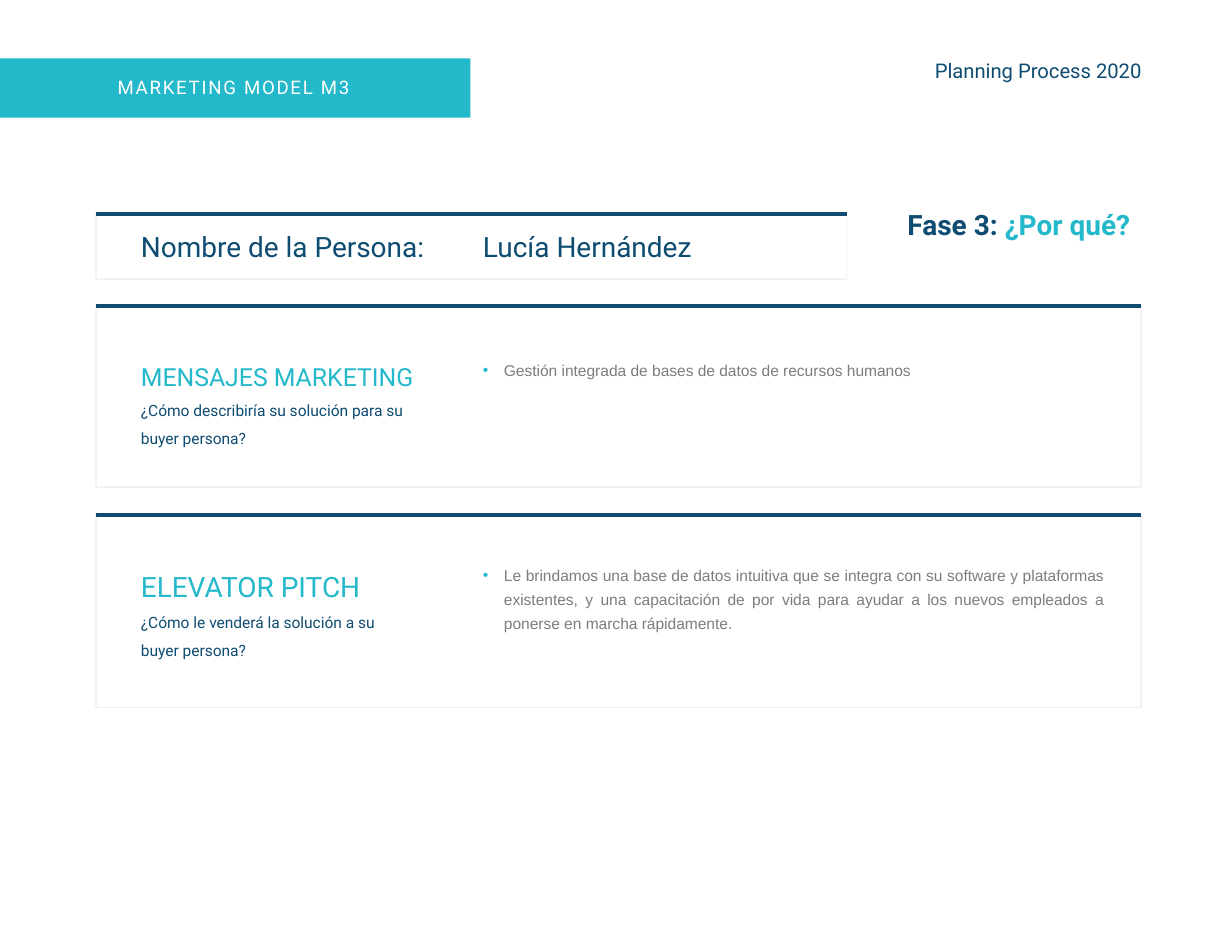
from lxml import etree
from pptx import Presentation
from pptx.dml.color import RGBColor
from pptx.enum import shapes as kinds, text as txt
from pptx.oxml import ns
from pptx.util import Pt

NAVY = RGBColor(0x0E, 0x4C, 0x71)
TEAL = RGBColor(0x24, 0xB8, 0xCB)
GRAY = RGBColor(0x7E, 0x7C, 0x7C)
PALE = RGBColor(0xF2, 0xF2, 0xF2)
WHITE = RGBColor(0xFF, 0xFF, 0xFF)
LEFT, WIDE = 61.9, 671.8
LABEL, BODY = 21.6, 241.5


def add_rect(slide, box, fill=None, edge=None):
    """Draw a flat rectangle with an optional fill and edge."""
    rect = slide.shapes.add_shape(kinds.MSO_SHAPE.RECTANGLE, *map(Pt, box))
    rect.shadow.inherit = False
    if fill is None:
        rect.fill.background()
    else:
        rect.fill.solid()
        rect.fill.fore_color.rgb = fill
    if edge is None:
        rect.line.fill.background()
    else:
        rect.line.color.rgb = edge
        rect.line.width = Pt(1)


def add_text(slide, box, lines, inset=True, wrap=True, align=None, space=None):
    """Place paragraphs, each a list of (words, size, colour) runs."""
    area = slide.shapes.add_textbox(*map(Pt, box))
    frame = area.text_frame
    frame.word_wrap = wrap
    frame.auto_size = txt.MSO_AUTO_SIZE.SHAPE_TO_FIT_TEXT
    if not inset:
        frame.margin_left = frame.margin_right = 0
        frame.margin_top = frame.margin_bottom = 0
    for i, line in enumerate(lines):
        para = frame.add_paragraph() if i else frame.paragraphs[0]
        para.alignment = align
        para.line_spacing = space
        for words, size, color in line:
            run = para.add_run()
            run.text = words
            run.font.name = "Roboto"
            run.font.size = Pt(size)
            run.font.color.rgb = color
    return frame


def add_bullet(para):
    """Give a paragraph a teal bullet with a hanging indent."""
    props = para._p.get_or_add_pPr()
    props.set("marL", str(Pt(13.5)))
    props.set("indent", str(-Pt(13.5)))
    tint = etree.SubElement(props, ns.qn("a:buClr"))
    etree.SubElement(tint, ns.qn("a:srgbClr")).set("val", str(TEAL))
    etree.SubElement(props, ns.qn("a:buFont")).set("typeface", "Arial")
    etree.SubElement(props, ns.qn("a:buChar")).set("char", "•")


def add_card(slide, box):
    """Draw a pale frame with a navy rule along its top."""
    x, y, w, h = box
    add_rect(slide, box, edge=PALE)
    rule = slide.shapes.add_connector(
        kinds.MSO_CONNECTOR.STRAIGHT, Pt(x), Pt(y), Pt(x + w), Pt(y))
    rule.line.color.rgb = NAVY
    rule.line.width = Pt(2.25)
    etree.SubElement(rule._element.spPr, ns.qn("a:effectLst"))


def add_header(slide, box):
    """Place the teal banner and the process name."""
    x, y, w, h = box
    add_rect(slide, (x, y, 302.4, h), fill=TEAL)
    frame = add_text(slide, (x + 75.6, y + 11.5, 170, 14.4),
                     [[("MARKETING MODEL M3", 12, WHITE)]], inset=False)
    frame.paragraphs[0].runs[0].font._element.set("spc", "110")
    add_text(slide, (x + w - 161.3, y, 161.3, 15.8),
             [[("Planning Process 2020", 13, NAVY)]],
             inset=False, align=txt.PP_ALIGN.RIGHT)


def add_name(slide, box):
    """Place the persona's name card."""
    x, y, w, h = box
    add_card(slide, box)
    for shift, width, words in ((LABEL, 205, "Nombre de la Persona:"),
                                (BODY, 196, "Lucía Hernández")):
        add_text(slide, (x + shift, y + 6.5, width, 29), [[(words, 18, NAVY)]])


def add_phase(slide, box):
    """Place the bold phase title."""
    frame = add_text(slide, box, [[("Fase 3: ", 18, NAVY), ("¿Por qué?", 18, TEAL)]],
                     wrap=False, align=txt.PP_ALIGN.RIGHT)
    for run in frame.paragraphs[0].runs:
        run.font.bold = True


def add_topic(slide, box, title, size, asks, answer, head, drop, span):
    """Place a card with a title, its question and a bulleted answer."""
    x, y, w, h = box
    add_card(slide, box)
    lines = [[(title, size, TEAL)]] + [[(ask, 10, NAVY)] for ask in asks]
    add_text(slide, (x + LABEL, y + head, span, 72), lines, wrap=False, space=1.5)
    frame = add_text(slide, (x + BODY, y + drop, 413, 22), [[(answer, 10, GRAY)]],
                     align=txt.PP_ALIGN.JUSTIFY, space=1.3)
    para = frame.paragraphs[0]
    para.runs[0].font.name = "Arial"
    add_bullet(para)


def main():
    """Build the slide and save it."""
    deck = Presentation()
    deck.slide_width, deck.slide_height = Pt(792), Pt(612)
    slide = deck.slides.add_slide(deck.slide_layouts[6])
    add_header(slide, (0, 37.5, LEFT + WIDE, 38.2))
    add_name(slide, (LEFT, 137.5, 482.4, 41.8))
    add_phase(slide, (572.4, 129.6, 161.3, 29))
    add_topic(slide, (LEFT, 196.6, WIDE, 116.6), "MENSAJES MARKETING", 16,
              ("¿Cómo describiría su solución para su", "buyer persona?"),
              "Gestión integrada de bases de datos de recursos humanos",
              23, 28.1, 201.6)
    add_topic(slide, (LEFT, 331.2, WIDE, 123.8), "ELEVATOR PITCH", 18,
              ("¿Cómo le venderá la solución a su", "buyer persona?"),
              "Le brindamos una base de datos intuitiva que se integra con su "
              "software y plataformas existentes, y una capacitación de por vida "
              "para ayudar a los nuevos empleados a ponerse en marcha rápidamente.",
              20.9, 25.2, 170.6)
    deck.save("out.pptx")


if __name__ == "__main__":
    main()
